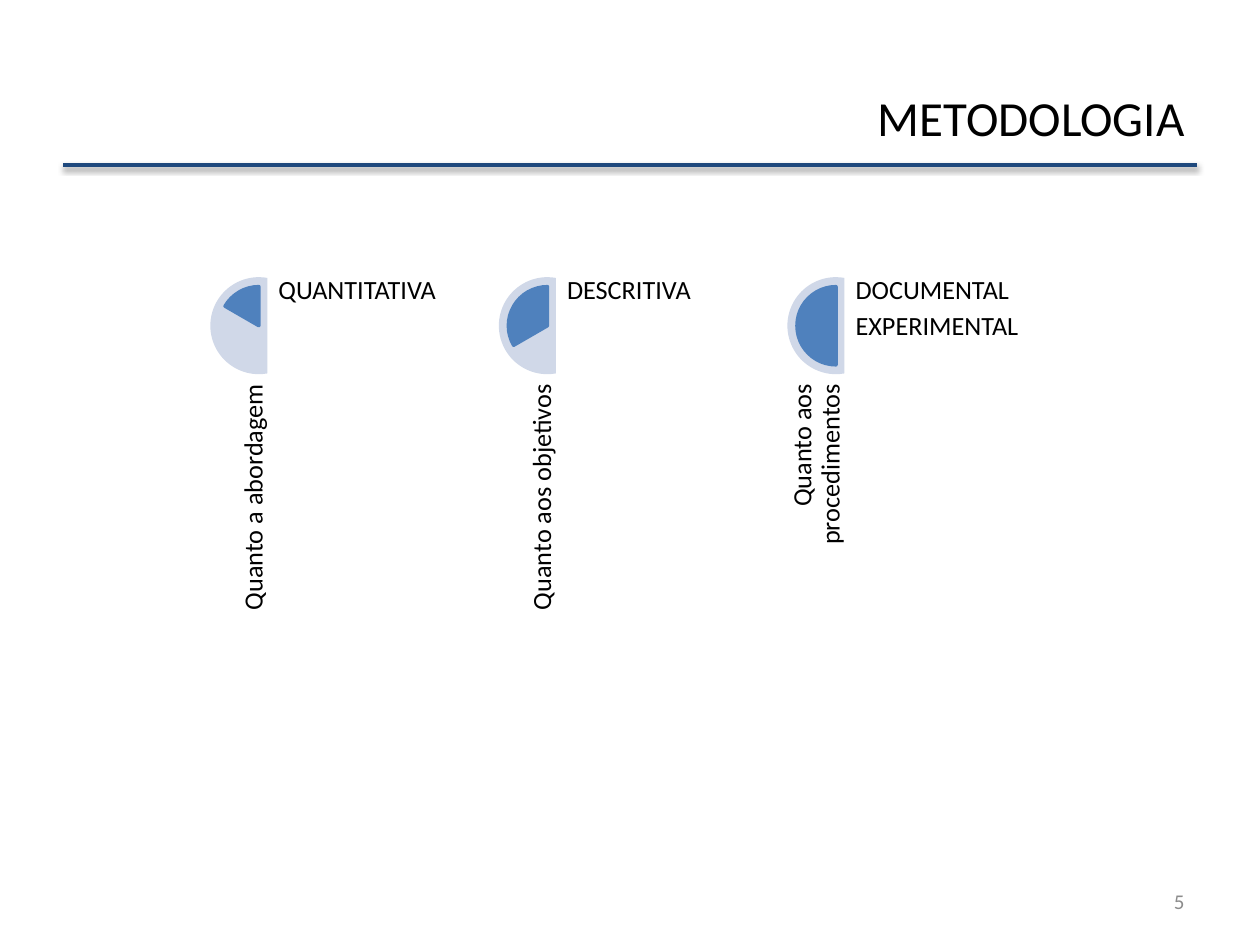
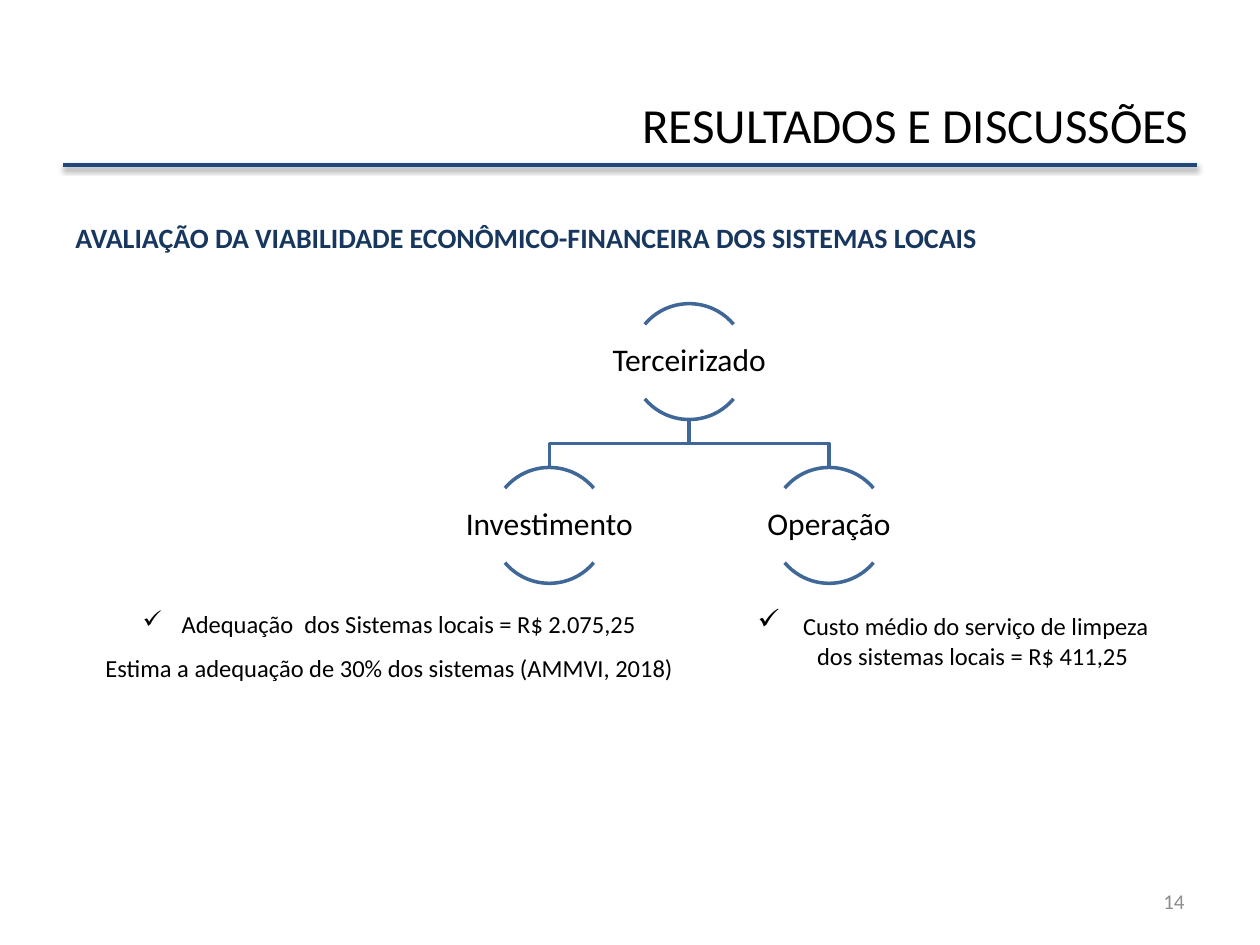
from dataclasses import dataclass
from typing import Optional

import lxml.etree
import pptx
import pptx.dml.color
import pptx.enum.shapes
import pptx.enum.text
import pptx.oxml.ns
import pptx.util

Inches = pptx.util.Inches
Pt = pptx.util.Pt
RGBColor = pptx.dml.color.RGBColor
SHAPE = pptx.enum.shapes.MSO_SHAPE
ALIGN = pptx.enum.text.PP_ALIGN
ANCHOR = pptx.enum.text.MSO_ANCHOR
qn = pptx.oxml.ns.qn

BLACK = RGBColor(0x00, 0x00, 0x00)
GREY = RGBColor(0x8C, 0x8C, 0x8C)
RULE_BLUE = RGBColor(0x1F, 0x49, 0x7D)
HEADING_BLUE = RGBColor(0x17, 0x37, 0x5E)
CHORD_BLUE = RGBColor(0xD0, 0xD8, 0xE8)
PIE_BLUE = RGBColor(0x4F, 0x81, 0xBD)
TREE_BLUE = RGBColor(0x3F, 0x67, 0x97)
FONT = "Calibri"
LINE_WIDTH = Pt(2)

CRITERIA_LEFT, CRITERIA_TOP, CRITERIA_PITCH = 1.67, 2.2, 2.29
CHORD_SIZE, PIE_SIZE = 0.77, 0.62
CHORD_ANGLES = (48, 168)
PIE_END = 162

ROOT_X, ROOT_TOP = 5.47, 2.41
BRANCH_DX, BRANCH_DY = 1.11, 1.3
NODE_SIZE = 0.92
NODE_ARCS = ((132, 192), (24, 84))
LABEL_WIDTH, LABEL_HEIGHT = 1.83, 0.59


@dataclass(frozen=True)
class Box:
    left: float
    top: float
    width: float
    height: float

    def lengths(self) -> tuple:
        return tuple(map(Inches, (self.left, self.top, self.width, self.height)))


@dataclass(frozen=True)
class Style:
    size: int
    color: RGBColor = BLACK
    bold: bool = False
    align: ALIGN = ALIGN.LEFT
    anchor: ANCHOR = ANCHOR.TOP
    spacing: Optional[float] = None
    after: Optional[float] = None
    inset: Optional[float] = None
    grow: bool = False


@dataclass(frozen=True)
class Criterion:
    caption: str
    answers: tuple
    pie_start: int


@dataclass(frozen=True)
class Node:
    label: str
    center: float
    top: float


TITLE = Style(28, align=ALIGN.RIGHT, anchor=ANCHOR.MIDDLE)
PAGE_NUMBER = Style(12, GREY, align=ALIGN.RIGHT, anchor=ANCHOR.MIDDLE)
CAPTION = Style(15, align=ALIGN.RIGHT, anchor=ANCHOR.BOTTOM, spacing=0.9, inset=0)
ANSWER = Style(15, spacing=0.9, after=4, inset=0)
HEADING = Style(16, HEADING_BLUE, bold=True, grow=True)
NODE_LABEL = Style(18, align=ALIGN.CENTER, anchor=ANCHOR.MIDDLE, spacing=0.9, inset=0.01)
INVESTMENT = Style(14, align=ALIGN.CENTER, spacing=1.5, grow=True)
OPERATION = Style(14, align=ALIGN.CENTER, grow=True)

CRITERIA = (
    Criterion("Quanto a abordagem", ("QUANTITATIVA",), 126),
    Criterion("Quanto aos objetivos", ("DESCRITIVA",), 90),
    Criterion("Quanto aos procedimentos", ("DOCUMENTAL", "EXPERIMENTAL"), 54),
)
ROOT = Node("Terceirizado", ROOT_X, ROOT_TOP)
BRANCHES = (
    Node("Investimento", ROOT_X - BRANCH_DX, ROOT_TOP + BRANCH_DY),
    Node("Operação", ROOT_X + BRANCH_DX, ROOT_TOP + BRANCH_DY),
)


def add_check(paragraph) -> None:
    properties = paragraph._p.get_or_add_pPr()
    properties.set("marL", str(Inches(0.31)))
    properties.set("indent", str(-Inches(0.31)))
    lxml.etree.SubElement(properties, qn("a:buChar"), char="✓")


def write(frame, lines: tuple, style: Style, checked: bool = False) -> None:
    frame.word_wrap = True
    frame.vertical_anchor = style.anchor
    if style.grow:
        frame.auto_size = pptx.enum.text.MSO_AUTO_SIZE.SHAPE_TO_FIT_TEXT
    if style.inset is not None:
        frame.margin_left = frame.margin_right = Inches(style.inset)
        frame.margin_top = frame.margin_bottom = Inches(style.inset)
    for index, line in enumerate(lines):
        paragraph = frame.add_paragraph() if index else frame.paragraphs[0]
        if checked and index == 0:
            add_check(paragraph)
        paragraph.text = line
        paragraph.alignment = style.align
        if style.spacing:
            paragraph.line_spacing = style.spacing
        if style.after and index < len(lines) - 1:
            paragraph.space_after = Pt(style.after)
        paragraph.font.name = FONT
        paragraph.font.size = Pt(style.size)
        paragraph.font.bold = style.bold
        paragraph.font.color.rgb = style.color


def add_text(slide, box: Box, lines: tuple, style: Style, checked: bool = False):
    textbox = slide.shapes.add_textbox(*box.lengths())
    write(textbox.text_frame, lines, style, checked)
    return textbox


def add_round(slide, kind: SHAPE, box: Box, angles: tuple,
              fill: Optional[RGBColor], line: Optional[RGBColor]) -> None:
    sector = slide.shapes.add_shape(kind, *box.lengths())
    sector.shadow.inherit = False
    for index, angle in enumerate(angles):
        sector.adjustments[index] = angle
    if fill is None:
        sector.fill.background()
    else:
        sector.fill.solid()
        sector.fill.fore_color.rgb = fill
    if line is None:
        sector.line.fill.background()
    else:
        sector.line.color.rgb = line
        sector.line.width = LINE_WIDTH


def add_title_rule(slide) -> None:
    rule = slide.shapes.add_connector(
        pptx.enum.shapes.MSO_CONNECTOR.STRAIGHT,
        Inches(0.5), Inches(1.31), Inches(9.5), Inches(1.31))
    rule.line.color.rgb = RULE_BLUE
    rule.line.width = Pt(2.5)
    effects = lxml.etree.SubElement(rule._element.spPr, qn("a:effectLst"))
    shadow = lxml.etree.SubElement(
        effects, qn("a:outerShdw"), blurRad=str(Pt(3.1)), dist=str(Pt(1.6)),
        dir="5400000", rotWithShape="0")
    shade = lxml.etree.SubElement(shadow, qn("a:srgbClr"), val=str(BLACK))
    lxml.etree.SubElement(shade, qn("a:alpha"), val="38000")


def add_page(deck, title: str, title_box: Box, number: str):
    slide = deck.slides.add_slide(deck.slide_layouts.get_by_name("Title Only"))
    heading = slide.shapes.title
    heading.left, heading.top, heading.width, heading.height = title_box.lengths()
    write(heading.text_frame, (title,), TITLE)
    add_title_rule(slide)
    add_text(slide, Box(7.17, 6.95, 2.33, 0.4), (number,), PAGE_NUMBER)
    return slide


def add_criterion(slide, criterion: Criterion, left: float) -> None:
    top = CRITERIA_TOP
    add_round(slide, SHAPE.CHORD, Box(left, top, CHORD_SIZE, CHORD_SIZE),
              CHORD_ANGLES, CHORD_BLUE, None)
    margin = (CHORD_SIZE - PIE_SIZE) / 2
    add_round(slide, SHAPE.PIE, Box(left + margin, top + margin, PIE_SIZE, PIE_SIZE),
              (criterion.pie_start, PIE_END), PIE_BLUE, PIE_BLUE)
    caption = add_text(slide, Box(left - 0.89, top + 1.74, 2.24, 0.46),
                       (criterion.caption,), CAPTION)
    caption.rotation = 270
    add_text(slide, Box(left + 0.54, top, 1.55, 3.09), criterion.answers, ANSWER)


def add_branch_line(slide, parent: Node, child: Node) -> None:
    start = parent.top + NODE_SIZE
    middle = (start + child.top) / 2
    builder = slide.shapes.build_freeform(Inches(parent.center), Inches(start))
    corners = ((parent.center, middle), (child.center, middle), (child.center, child.top))
    builder.add_line_segments([(Inches(x), Inches(y)) for x, y in corners], close=False)
    branch = builder.convert_to_shape()
    branch.shadow.inherit = False
    branch.fill.background()
    branch.line.color.rgb = TREE_BLUE
    branch.line.width = LINE_WIDTH


def add_node(slide, node: Node) -> None:
    circle = Box(node.center - NODE_SIZE / 2, node.top, NODE_SIZE, NODE_SIZE)
    for angles in NODE_ARCS:
        add_round(slide, SHAPE.ARC, circle, angles, None, TREE_BLUE)
    label = Box(node.center - LABEL_WIDTH / 2,
                node.top + (NODE_SIZE - LABEL_HEIGHT) / 2, LABEL_WIDTH, LABEL_HEIGHT)
    add_text(slide, label, (node.label,), NODE_LABEL)


def build_methodology(deck) -> None:
    slide = add_page(deck, "METODOLOGIA", Box(0.5, 0.3, 9, 1.25), "5")
    for index, criterion in enumerate(CRITERIA):
        add_criterion(slide, criterion, CRITERIA_LEFT + index * CRITERIA_PITCH)


def build_results(deck) -> None:
    slide = add_page(deck, "RESULTADOS E DISCUSSÕES", Box(0.53, 0.36, 9, 1.25), "14")
    add_text(slide, Box(0.5, 1.7, 8.97, 0.37),
             ("AVALIAÇÃO DA VIABILIDADE ECONÔMICO-FINANCEIRA DOS SISTEMAS LOCAIS",), HEADING)
    for branch in BRANCHES:
        add_branch_line(slide, ROOT, branch)
    for node in (ROOT, *BRANCHES):
        add_node(slide, node)
    add_text(slide, Box(0.5, 4.67, 5.18, 0.81),
             ("Adequação  dos Sistemas locais = R$ 2.075,25",
              "Estima a adequação de 30% dos sistemas (AMMVI, 2018)"),
             INVESTMENT, checked=True)
    operation = add_text(slide, Box(5.87, 4.77, 3.39, 0.61), (" ",), OPERATION, checked=True)
    cost = operation.text_frame.paragraphs[0]
    cost.runs[0].font.size = Pt(16)
    cost.add_run().text = "Custo médio do serviço de limpeza dos sistemas locais = R$ 411,25"


def main() -> None:
    deck = pptx.Presentation()
    deck.slide_width, deck.slide_height = Inches(10), Inches(7.5)
    build_methodology(deck)
    build_results(deck)
    deck.save("out.pptx")


if __name__ == "__main__":
    main()
